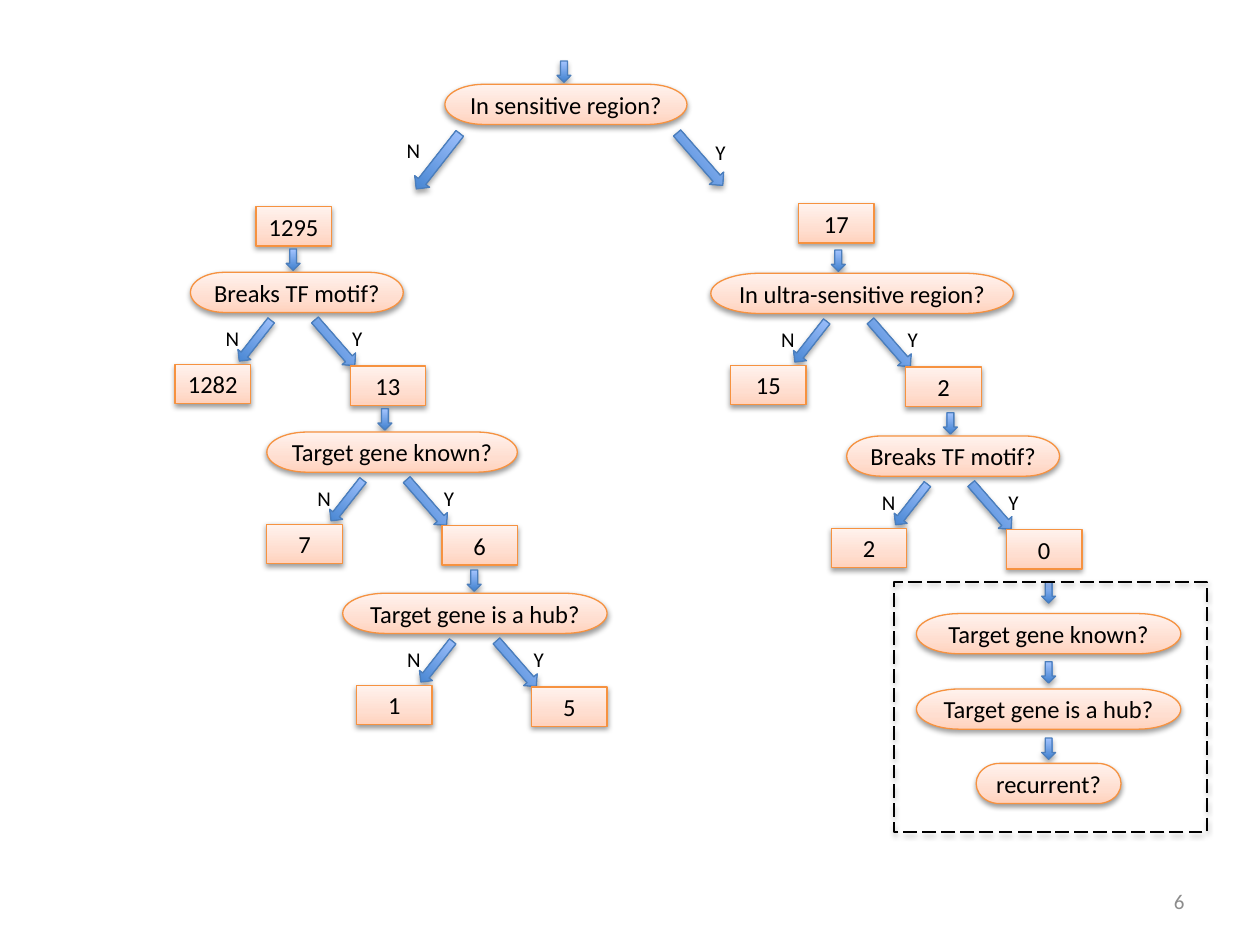
from pptx import Presentation
from pptx.dml.color import RGBColor
from pptx.enum.dml import MSO_LINE
from pptx.enum.shapes import MSO_SHAPE
from pptx.enum.text import MSO_ANCHOR, MSO_AUTO_SIZE, PP_ALIGN
from pptx.oxml import parse_xml
from pptx.oxml.ns import nsdecls, qn
from pptx.util import Cm, Pt

COLORS = {"text": "000000", "number": "8C8C8C", "box_line": "F69240",
          "arrow_line": "4B7EBC", "frame": "000000", "shadow": "000000"}
BOX_STOPS = [(0, "FFD2BD"), (35, "FFDED0"), (100, "FFF2ED")]
ARROW_STOPS = [(0, "3F80CE"), (100, "A4C4FF")]

# All places and sizes are in centimetres.
# question, left, top, width, x of arrow above, x of N arrow, N count, Y count
QUESTIONS = [
    ("Breaks TF motif?", 3.84, 5.49, 4.29, 5.77, 4.98, "1282", "13"),
    ("Target gene known?", 5.38, 8.71, 5.05, 7.62, 6.83, "7", "6"),
    ("Target gene is a hub?", 6.91, 11.96, 5.33, 9.42, 8.64, "1", "5"),
    ("In ultra-sensitive region?", 14.33, 5.51, 6.10, 16.76, 16.18, "15", "2"),
    ("Breaks TF motif?", 17.07, 8.79, 4.29, 19.02, 18.21, "2", "0"),
]
ROOT = ("In sensitive region?", 8.97, 1.70, 4.88, 11.23)
ROOT_COUNTS = [("1295", 5.16, 4.17), ("17", 16.10, 4.11)]
# question, width, top, top of arrow above
FINAL_CHAIN = [
    ("Target gene known?", 5.33, 12.37, 11.73),
    ("Target gene is a hub?", 5.33, 13.89, 13.34),
    ("recurrent?", 2.92, 15.39, 14.88),
]
CHAIN_CENTER = 21.14
FRAME = (18.03, 11.73, 6.30, 5.05)
PAGE_NUMBER = ("6", 18.21, 17.65, 5.92, 1.02)

QUESTION_HEIGHT = 0.81
COUNT_SIZE = (1.52, 0.79)
LABEL_SIZE = (0.66, 0.76)
DOWN_SIZE = (0.28, 0.43)
DOWN_GAP = 0.47
BRANCH_DROP = 0.86
NO_ANGLE, YES_ANGLE = 38.1, 48.9


def rgb(name):
    return RGBColor.from_string(COLORS[name])


def add_gradient(shape, stops):
    """Fill the shape from bottom to top."""
    marks = "".join(f'<a:gs pos="{at * 1000}"><a:srgbClr val="{color}"/></a:gs>'
                    for at, color in stops)
    gradient = parse_xml(f'<a:gradFill {nsdecls("a")} rotWithShape="1"><a:gsLst>{marks}'
                         '</a:gsLst><a:lin ang="16200000" scaled="0"/></a:gradFill>')
    shape.element.spPr.find(qn("a:prstGeom")).addnext(gradient)


def add_shadow(shape, distance, opacity):
    shape.shadow.inherit = False
    shape.element.spPr.find(qn("a:effectLst")).append(parse_xml(
        f'<a:outerShdw {nsdecls("a")} blurRad="{Pt(3.1)}" dist="{Pt(distance)}" '
        f'dir="5400000" rotWithShape="0"><a:srgbClr val="{COLORS["shadow"]}">'
        f'<a:alpha val="{opacity * 1000}"/></a:srgbClr></a:outerShdw>'))


def set_text(frame, text, size, color="text", align=PP_ALIGN.LEFT):
    frame.word_wrap = False
    para = frame.paragraphs[0]
    para.text = text
    para.alignment = align
    para.font.name = "Calibri"
    para.font.size = Pt(size)
    para.font.color.rgb = rgb(color)


def add_outlined(page, kind, place, line_color, line_width=0.75):
    shape = page.shapes.add_shape(kind, *map(Cm, place))
    shape.line.color.rgb = rgb(line_color)
    shape.line.width = Pt(line_width)
    return shape


def add_box(page, kind, text, *place):
    box = add_outlined(page, kind, place, "box_line")
    add_gradient(box, BOX_STOPS)
    add_shadow(box, 1.6, 38)
    box.text_frame.vertical_anchor = MSO_ANCHOR.MIDDLE
    set_text(box.text_frame, text, 14, align=PP_ALIGN.CENTER)


def add_question(page, text, left, top, width):
    add_box(page, MSO_SHAPE.FLOWCHART_TERMINATOR, text, left, top, width, QUESTION_HEIGHT)


def add_count(page, text, left, top):
    add_box(page, MSO_SHAPE.FLOWCHART_PROCESS, text, left, top, *COUNT_SIZE)


def add_arrow(page, kind, *place, angle=0):
    arrow = add_outlined(page, kind, place, "arrow_line")
    arrow.rotation = angle
    add_gradient(arrow, ARROW_STOPS)
    add_shadow(arrow, 1.8, 35)


def add_down_arrow(page, left, top):
    add_arrow(page, MSO_SHAPE.DOWN_ARROW, left, top, *DOWN_SIZE)


def add_label(page, text, left, top):
    label = page.shapes.add_textbox(*map(Cm, (left, top, *LABEL_SIZE)))
    set_text(label.text_frame, text, 12)
    label.text_frame.auto_size = MSO_AUTO_SIZE.SHAPE_TO_FIT_TEXT


def add_decision(page, text, left, top, width, arrow_x, branch_x, no_count, yes_count):
    """Add a question with its incoming arrow and its two answers."""
    add_down_arrow(page, arrow_x, top - DOWN_GAP)
    add_question(page, text, left, top, width)
    y = top + BRANCH_DROP
    add_arrow(page, MSO_SHAPE.DOWN_ARROW, branch_x, y, 0.33, 1.04, angle=NO_ANGLE)
    add_label(page, "N", branch_x - 0.68, y + 0.09)
    add_arrow(page, MSO_SHAPE.RIGHT_ARROW, branch_x + 1.16, y + 0.38, 1.22, 0.36,
              angle=YES_ANGLE)
    add_count(page, no_count, branch_x - 1.45, y + 1.00)
    add_count(page, yes_count, branch_x + 2.08, y + 1.03)
    add_label(page, "Y", branch_x + 1.87, y + 0.09)


def add_root(page):
    text, left, top, width, arrow_x = ROOT
    add_down_arrow(page, arrow_x, top - DOWN_GAP)
    add_question(page, text, left, top, width)
    add_arrow(page, MSO_SHAPE.DOWN_ARROW, 8.64, 2.54, 0.38, 1.42, angle=NO_ANGLE)
    add_label(page, "N", 7.95, 2.64)
    add_arrow(page, MSO_SHAPE.RIGHT_ARROW, 13.41, 3.02, 1.40, 0.38, angle=YES_ANGLE)
    add_label(page, "Y", 14.17, 2.69)
    for count in ROOT_COUNTS:
        add_count(page, *count)


def add_final_chain(page):
    for text, width, top, arrow_top in FINAL_CHAIN:
        add_down_arrow(page, CHAIN_CENTER - DOWN_SIZE[0] / 2, arrow_top)
        add_question(page, text, CHAIN_CENTER - width / 2, top, width)
    frame = add_outlined(page, MSO_SHAPE.RECTANGLE, FRAME, "frame", 1)
    frame.fill.background()
    frame.line.dash_style = MSO_LINE.LONG_DASH
    add_shadow(frame, 1.8, 35)


def add_page_number(page):
    text, *place = PAGE_NUMBER
    box = page.shapes.add_textbox(*map(Cm, place))
    set_text(box.text_frame, text, 12, "number", PP_ALIGN.RIGHT)
    box.text_frame.word_wrap = True
    box.text_frame.vertical_anchor = MSO_ANCHOR.MIDDLE


def main():
    deck = Presentation()
    deck.slide_width, deck.slide_height = Cm(25.4), Cm(19.05)
    page = deck.slides.add_slide(deck.slide_layouts[6])
    add_root(page)
    for question in QUESTIONS:
        add_decision(page, *question)
    add_final_chain(page)
    add_page_number(page)
    deck.save("out.pptx")


if __name__ == "__main__":
    main()
